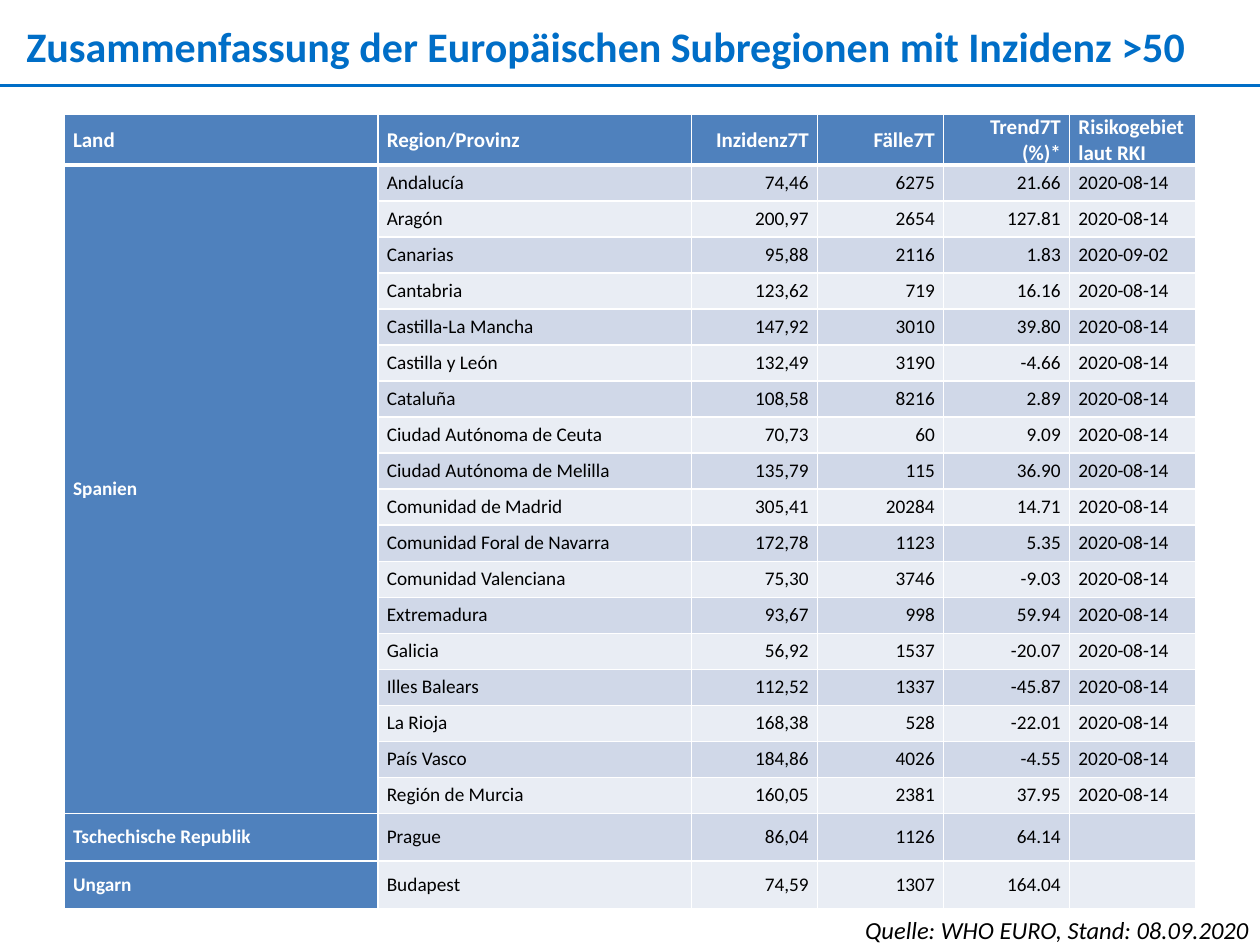
from dataclasses import dataclass

from lxml import etree
from pptx import Presentation
from pptx.dml.color import RGBColor
from pptx.enum.shapes import MSO_CONNECTOR
from pptx.enum.text import MSO_ANCHOR, MSO_AUTO_SIZE, PP_ALIGN
from pptx.oxml.ns import qn
from pptx.util import Inches, Pt

LEFT, RIGHT = PP_ALIGN.LEFT, PP_ALIGN.RIGHT
MIDDLE = MSO_ANCHOR.MIDDLE
GROW = MSO_AUTO_SIZE.SHAPE_TO_FIT_TEXT
STRAIGHT = MSO_CONNECTOR.STRAIGHT


@dataclass(frozen=True)
class Theme:
    font: str = "Calibri"
    accent: str = "006EC7"
    header: str = "4F81BD"
    bands: tuple = ("D0D8E8", "E9EDF4")
    light: str = "FFFFFF"
    dark: str = "000000"
    title_size: int = 24
    source_size: int = 14
    header_size: int = 12
    body_size: int = 11


THEME = Theme()

HEADERS = ("Land", "Region/Provinz", "Inzidenz7T", "Fälle7T", "Trend7T (%)*", "Risikogebiet laut RKI")
COLUMN_WIDTHS = (2.49, 2.49, 1, 1, 1, 1)
ALIGNMENTS = (LEFT, LEFT, RIGHT, RIGHT, RIGHT, LEFT)
TABLE_HEIGHT = 6.31
HEADER_HEIGHT = 0.4
SINGLE_HEIGHT = 0.38

COUNTRIES = {
    "Spanien": (
        ("Andalucía", "74,46", "6275", "21.66", "2020-08-14"),
        ("Aragón", "200,97", "2654", "127.81", "2020-08-14"),
        ("Canarias", "95,88", "2116", "1.83", "2020-09-02"),
        ("Cantabria", "123,62", "719", "16.16", "2020-08-14"),
        ("Castilla-La Mancha", "147,92", "3010", "39.80", "2020-08-14"),
        ("Castilla y León", "132,49", "3190", "-4.66", "2020-08-14"),
        ("Cataluña", "108,58", "8216", "2.89", "2020-08-14"),
        ("Ciudad Autónoma de Ceuta", "70,73", "60", "9.09", "2020-08-14"),
        ("Ciudad Autónoma de Melilla", "135,79", "115", "36.90", "2020-08-14"),
        ("Comunidad de Madrid", "305,41", "20284", "14.71", "2020-08-14"),
        ("Comunidad Foral de Navarra", "172,78", "1123", "5.35", "2020-08-14"),
        ("Comunidad Valenciana", "75,30", "3746", "-9.03", "2020-08-14"),
        ("Extremadura", "93,67", "998", "59.94", "2020-08-14"),
        ("Galicia", "56,92", "1537", "-20.07", "2020-08-14"),
        ("Illes Balears", "112,52", "1337", "-45.87", "2020-08-14"),
        ("La Rioja", "168,38", "528", "-22.01", "2020-08-14"),
        ("País Vasco", "184,86", "4026", "-4.55", "2020-08-14"),
        ("Región de Murcia", "160,05", "2381", "37.95", "2020-08-14"),
    ),
    "Tschechische Republik": (("Prague", "86,04", "1126", "64.14", ""),),
    "Ungarn": (("Budapest", "74,59", "1307", "164.04", ""),),
}


def add_run(paragraph, text, size, color, bold=False, italic=False):
    run = paragraph.add_run()
    run.text = text
    font = run.font
    font.name, font.size = THEME.font, Pt(size)
    font.bold, font.italic = bold, italic
    font.color.rgb = RGBColor.from_string(color)


def add_text(slide, box, alignment=LEFT, inset=None):
    shape = slide.shapes.add_textbox(*map(Inches, box))
    frame = shape.text_frame
    frame.word_wrap = True
    frame.auto_size = GROW
    if inset is not None:
        frame.margin_left = frame.margin_right = Inches(inset)
        frame.margin_top = frame.margin_bottom = Inches(inset)
    paragraph = frame.paragraphs[0]
    paragraph.alignment = alignment
    return paragraph


def add_rule(slide, top):
    line = slide.shapes.add_connector(STRAIGHT, 0, Inches(top), Inches(10), Inches(top))
    line.line.color.rgb = RGBColor.from_string(THEME.accent)
    line.line.width = Pt(1.5)
    etree.SubElement(line._element.spPr, qn("a:effectLst"))


def set_borders(cell, top=1, bottom=1):
    properties = cell._tc.get_or_add_tcPr()
    for side, width in (("L", 1), ("R", 1), ("T", top), ("B", bottom)):
        border = etree.SubElement(properties, qn(f"a:ln{side}"), w=str(Pt(width)))
        fill = etree.SubElement(border, qn("a:solidFill"))
        etree.SubElement(fill, qn("a:srgbClr"), val=THEME.light)


def style_cell(cell, fill, top=1, bottom=1):
    set_borders(cell, top, bottom)
    cell.fill.solid()
    cell.fill.fore_color.rgb = RGBColor.from_string(fill)
    cell.vertical_anchor = MIDDLE
    cell.margin_left = cell.margin_right = cell.margin_top = cell.margin_bottom = 0


def write_cell(cell, text, size, color, alignment=LEFT, bold=False):
    paragraph = cell.text_frame.paragraphs[0]
    paragraph.alignment = alignment
    paragraph.space_before = paragraph.space_after = Pt(2)
    properties = paragraph._p.get_or_add_pPr()
    for side in ("marL", "marR"):
        properties.set(side, str(Inches(0.07)))
    if text:
        add_run(paragraph, text, size, color, bold)


def fill_header(table):
    for cell, text, alignment in zip(table.rows[0].cells, HEADERS, ALIGNMENTS):
        style_cell(cell, THEME.header, bottom=3)
        write_cell(cell, text, THEME.header_size, THEME.light, alignment, bold=True)


def fill_country(table, first_row, country, regions, row_height):
    for row, region in enumerate(regions, first_row):
        table.rows[row].height = Inches(row_height)
        top = 3 if row == 1 else 1
        style_cell(table.cell(row, 0), THEME.header, top)
        for column, text in enumerate(region, 1):
            cell = table.cell(row, column)
            style_cell(cell, THEME.bands[(row - 1) % 2], top)
            write_cell(cell, text, THEME.body_size, THEME.dark, ALIGNMENTS[column])
    label = table.cell(first_row, 0)
    write_cell(label, country, THEME.body_size, THEME.light, bold=True)
    if len(regions) > 1:
        label.merge(table.cell(first_row + len(regions) - 1, 0))


def add_region_table(slide):
    counts = [len(regions) for regions in COUNTRIES.values()]
    singles = counts.count(1)
    region_height = (TABLE_HEIGHT - HEADER_HEIGHT - singles * SINGLE_HEIGHT) / (sum(counts) - singles)
    table = slide.shapes.add_table(
        sum(counts) + 1, len(HEADERS), Inches(0.51), Inches(0.91),
        Inches(sum(COLUMN_WIDTHS)), Inches(TABLE_HEIGHT),
    ).table
    for column, width in zip(table.columns, COLUMN_WIDTHS):
        column.width = Inches(width)
    table.rows[0].height = Inches(HEADER_HEIGHT)
    fill_header(table)
    row = 1
    for country, regions in COUNTRIES.items():
        height = SINGLE_HEIGHT if len(regions) == 1 else region_height
        fill_country(table, row, country, regions, height)
        row += len(regions)


def main():
    presentation = Presentation()
    presentation.slide_width, presentation.slide_height = Inches(10), Inches(7.5)
    slide = presentation.slides.add_slide(presentation.slide_layouts[6])
    title = add_text(slide, (0.21, 0.16, 9.63, 0.4), inset=0)
    add_run(title, "Zusammenfassung der Europäischen Subregionen mit Inzidenz >50",
            THEME.title_size, THEME.accent, bold=True)
    add_rule(slide, 0.68)
    source = add_text(slide, (5.39, 7.21, 4.62, 0.34), RIGHT)
    add_run(source, "Quelle: WHO EURO, Stand: 08.09.2020", THEME.source_size, THEME.dark, italic=True)
    add_region_table(slide)
    presentation.save("out.pptx")


if __name__ == "__main__":
    main()
